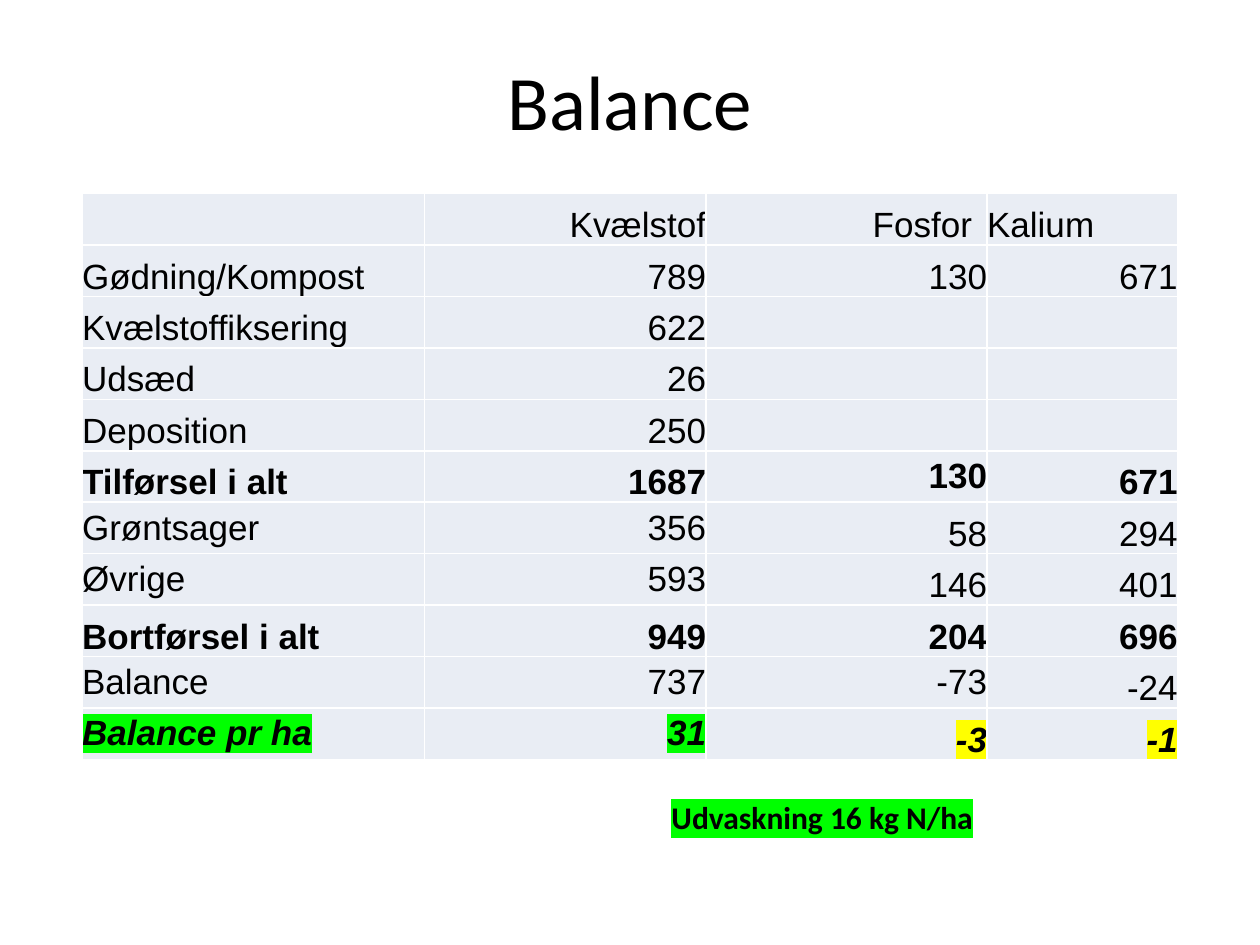
from lxml.etree import SubElement
from pptx import Presentation
from pptx.dml.color import RGBColor
from pptx.enum.text import MSO_ANCHOR, MSO_AUTO_SIZE, PP_ALIGN
from pptx.oxml import parse_xml
from pptx.oxml.ns import nsdecls, qn
from pptx.util import Pt

COLORS = {
    "text": "000000",
    "cell": "E9EDF4",
    "border": "FFFFFF",
    "green": "00FF00",
    "yellow": "FFFF00",
}


def write_text(frame, text, font="Arial", size=20, align=PP_ALIGN.LEFT,
               bold=False, italic=False, highlight=None):
    paragraph = frame.paragraphs[0]
    paragraph.alignment = align
    run = paragraph.add_run()
    run.text = text
    run.font.size = Pt(size)
    run.font.bold = bold
    run.font.italic = italic
    run.font.color.rgb = RGBColor.from_string(COLORS["text"])
    if highlight:
        mark = parse_xml(
            f'<a:highlight {nsdecls("a")}><a:srgbClr val="{COLORS[highlight]}"/></a:highlight>'
        )
        run.font._element.find(qn("a:solidFill")).addnext(mark)
    run.font.name = font


def set_borders(cell, color, width):
    properties = cell._tc.get_or_add_tcPr()
    for position, side in enumerate(("lnL", "lnR", "lnT", "lnB")):
        line = SubElement(properties, qn(f"a:{side}"), w=str(Pt(width)))
        fill = SubElement(line, qn("a:solidFill"))
        SubElement(fill, qn("a:srgbClr"), val=color)
        properties.insert(position, line)


presentation = Presentation()
presentation.slide_width = Pt(720)
presentation.slide_height = Pt(540)
slide = presentation.slides.add_slide(presentation.slide_layouts[6])

title = slide.shapes.add_textbox(Pt(36), Pt(21.6), Pt(648), Pt(70.6)).text_frame
title.word_wrap = True
title.vertical_anchor = MSO_ANCHOR.MIDDLE
write_text(title, "Balance", font="Calibri", size=44, align=PP_ALIGN.CENTER)

rows = [
    ("", "Kvælstof", "Fosfor", "Kalium"),
    ("Gødning/Kompost", "789", "130", "671"),
    ("Kvælstoffiksering", "622", "", ""),
    ("Udsæd", "26", "", ""),
    ("Deposition", "250", "", ""),
    ("Tilførsel i alt", "1687", "130", "671"),
    ("Grøntsager", "356", "58", "294"),
    ("Øvrige", "593", "146", "401"),
    ("Bortførsel i alt", "949", "204", "696"),
    ("Balance", "737", "-73", "-24"),
    ("Balance pr ha", "31", "-3", "-1"),
]
column_widths = [195.8, 160.8, 160.6, 108.9]
row_height = 29.4
total_rows = {5, 8}
result_row = len(rows) - 1
middle_cells = {(5, 2), (9, 2)} | {(row, column) for row in (6, 7, 9, 10) for column in (0, 1)}

table = slide.shapes.add_table(
    len(rows), len(column_widths), Pt(46.9), Pt(110.6),
    Pt(sum(column_widths)), Pt(row_height * len(rows)),
).table
table.first_row = False
table.horz_banding = False
for column, width in zip(table.columns, column_widths):
    column.width = Pt(width)

for row_index, values in enumerate(rows):
    table.rows[row_index].height = Pt(row_height)
    is_result = row_index == result_row
    for column_index, value in enumerate(values):
        cell = table.cell(row_index, column_index)
        cell.fill.solid()
        cell.fill.fore_color.rgb = RGBColor.from_string(COLORS["cell"])
        set_borders(cell, COLORS["border"], 1)
        cell.margin_left = cell.margin_right = cell.margin_top = cell.margin_bottom = Pt(0)
        if value == "Fosfor":
            cell.margin_right = Pt(8.64)
        is_middle = (row_index, column_index) in middle_cells
        cell.vertical_anchor = MSO_ANCHOR.MIDDLE if is_middle else MSO_ANCHOR.BOTTOM
        if value:
            is_left = column_index == 0 or value == "Kalium"
            mark = "green" if column_index < 2 else "yellow"
            write_text(
                cell.text_frame, value,
                align=PP_ALIGN.LEFT if is_left else PP_ALIGN.RIGHT,
                bold=is_result or row_index in total_rows,
                italic=is_result,
                highlight=mark if is_result else None,
            )

leaching = slide.shapes.add_textbox(Pt(376.6), Pt(452.2), Pt(188.6), Pt(28.8)).text_frame
leaching.word_wrap = False
leaching.auto_size = MSO_AUTO_SIZE.SHAPE_TO_FIT_TEXT
write_text(leaching, "Udvaskning 16 kg N/ha", font="Calibri", size=18, bold=True, highlight="green")

presentation.save("out.pptx")
